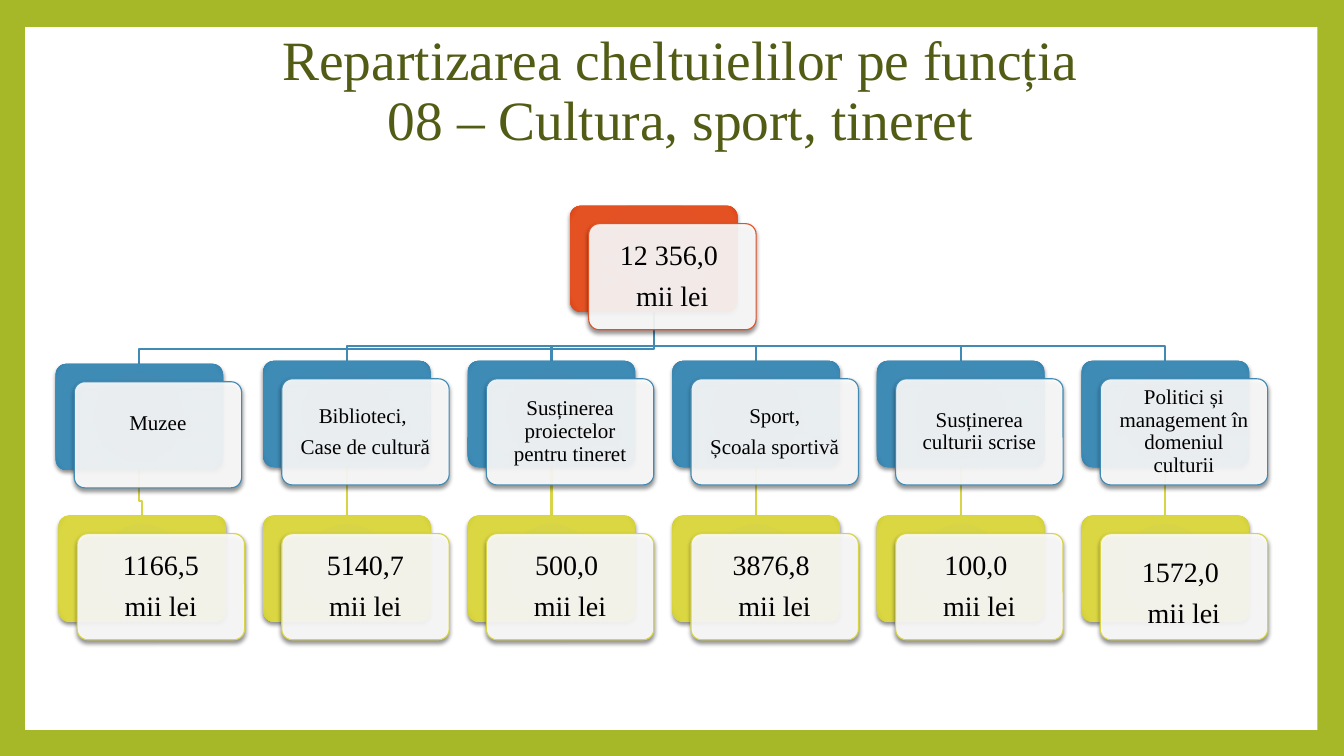
"""Builds a slide with the tree of culture, sport and youth spending."""
from lxml import etree
from pptx import Presentation
from pptx.dml.color import RGBColor
from pptx.enum.shapes import MSO_CONNECTOR, MSO_SHAPE
from pptx.enum.text import MSO_ANCHOR, PP_ALIGN
from pptx.oxml import parse_xml
from pptx.oxml.ns import nsdecls, qn
from pptx.util import Pt

RECT, ROUNDED = MSO_SHAPE.RECTANGLE, MSO_SHAPE.ROUNDED_RECTANGLE
STRAIGHT = MSO_CONNECTOR.STRAIGHT
CENTER, MIDDLE = PP_ALIGN.CENTER, MSO_ANCHOR.MIDDLE

GREEN = RGBColor(0xA6, 0xB7, 0x27)
OLIVE = RGBColor(0x53, 0x5C, 0x14)
WHITE = RGBColor(0xFF, 0xFF, 0xFF)
BLACK = RGBColor(0x00, 0x00, 0x00)
RED = RGBColor(0xDF, 0x53, 0x27)
RED_MID = RGBColor(0xE4, 0x51, 0x22)
RED_EDGE = RGBColor(0xDB, 0x43, 0x13)
BLUE = RGBColor(0x41, 0x8A, 0xB3)
BLUE_MID = RGBColor(0x3E, 0x8B, 0xB6)
BLUE_EDGE = RGBColor(0x31, 0x80, 0xAD)
YELLOW = RGBColor(0xD7, 0xD4, 0x47)
YELLOW_MID = RGBColor(0xDB, 0xD7, 0x43)
YELLOW_EDGE = RGBColor(0xD0, 0xCD, 0x33)
REDS = (RED, RED_MID, RED_EDGE)
BLUES = (BLUE, BLUE_MID, BLUE_EDGE)
YELLOWS = (YELLOW, YELLOW_MID, YELLOW_EDGE)

BOX_W, BOX_H = 119.6, 75.8
CARD_DX, CARD_DY = 13.3, 12.8
FIRST_X, PITCH = 41.8, 146.16
TOTAL_X, TOTAL_Y = 407.2, 147
CATEGORY_Y, VALUE_Y, BUS_Y = 257.8, 368.4, 247
MUSEUM_X, MUSEUM_Y, MUSEUM_BUS_Y = 39.7, 259.9, 249

BRANCHES = [
    ("Muzee", "1166,5\nmii lei"),
    ("Biblioteci, \nCase de cultură", "5140,7\nmii lei"),
    ("Susținerea proiectelor pentru tineret", "500,0 \nmii lei"),
    ("Sport,\nȘcoala sportivă", "3876,8 \nmii lei"),
    ("Susținerea culturii scrise", "100,0 \nmii lei"),
    ("Politici și management în domeniul culturii", "1572,0 \nmii lei"),
]


def write_text(shape, text, size, color=BLACK, gap=0, inset=0, shift=0):
    frame = shape.text_frame
    frame.word_wrap = True
    frame.vertical_anchor = MIDDLE
    frame.margin_left = frame.margin_right = Pt(inset)
    frame.margin_top = Pt(inset + max(0, 2 * shift))
    frame.margin_bottom = Pt(inset + max(0, -2 * shift))
    for index, line in enumerate(text.split("\n")):
        paragraph = frame.paragraphs[0] if index == 0 else frame.add_paragraph()
        paragraph.text = line
        paragraph.alignment = CENTER
        paragraph.line_spacing = 0.9
        paragraph.space_after = Pt(gap)
        for run in paragraph.runs:
            run.font.name = "Times New Roman"
            run.font.size = Pt(size)
            run.font.color.rgb = color


def add_box(x, y, colors, text, size, inset, shift=0):
    boxes = []
    for dx, dy in ((0, 0), (CARD_DX, CARD_DY)):
        box = slide.shapes.add_shape(ROUNDED, Pt(x + dx), Pt(y + dy), Pt(BOX_W), Pt(BOX_H))
        box.adjustments[0] = 0.1
        box.fill.solid()
        box.fill.fore_color.rgb = WHITE
        box.line.fill.background()
        box.shadow.inherit = False
        box.element.spPr.find(qn("a:effectLst")).append(parse_xml(
            f'<a:outerShdw {nsdecls("a")} blurRad="38100" dist="25400" dir="5400000" rotWithShape="0">'
            '<a:srgbClr val="000000"><a:alpha val="45000"/></a:srgbClr></a:outerShdw>'))
        boxes.append(box)
    back, card = boxes
    stops = "".join(f'<a:gs pos="{position}"><a:srgbClr val="{color}"/></a:gs>'
                    for position, color in zip((0, 90000, 100000), colors))
    solid = back.element.spPr.find(qn("a:solidFill"))
    back.element.spPr.replace(solid, parse_xml(
        f'<a:gradFill {nsdecls("a")} rotWithShape="1"><a:gsLst>{stops}</a:gsLst><a:path path="circle">'
        '<a:fillToRect l="100000" t="100000" r="100000" b="100000"/></a:path></a:gradFill>'))
    card_color = card.element.spPr.find(qn("a:solidFill"))[0]
    etree.SubElement(card_color, qn("a:alpha")).set("val", "90000")
    card.line.color.rgb = colors[0]
    card.line.width = Pt(0.79)
    write_text(card, text, size, gap=0.4 * size, inset=inset, shift=shift)
    return back


prs = Presentation()
prs.slide_width, prs.slide_height = Pt(960), Pt(540)
slide = prs.slides.add_slide(prs.slide_layouts[6])
slide.background.fill.solid()
slide.background.fill.fore_color.rgb = GREEN

panel = slide.shapes.add_shape(RECT, Pt(18), Pt(19.4), Pt(923), Pt(502))
panel.fill.solid()
panel.fill.fore_color.rgb = WHITE
panel.line.fill.background()
panel.shadow.inherit = False

title = slide.shapes.add_textbox(Pt(108), Pt(23), Pt(756), Pt(86))
write_text(title, "Repartizarea cheltuielilor pe funcția\v08 – Cultura, sport, tineret", 39.6, color=OLIVE)

columns = [FIRST_X + PITCH * index for index in range(len(BRANCHES))]
categories = [(MUSEUM_X, MUSEUM_Y, MUSEUM_BUS_Y)] + [(x, CATEGORY_Y, BUS_Y) for x in columns[1:]]
elbows = [(TOTAL_X, TOTAL_Y + BOX_H, bus_y, x, y, BLUE) for x, y, bus_y in categories]
elbows.append((MUSEUM_X, MUSEUM_Y + BOX_H, 357.8, FIRST_X, VALUE_Y, YELLOW))
for start_x, start_y, bend_y, end_x, end_y, color in elbows:
    start, end = Pt(start_x + BOX_W / 2), Pt(end_x + BOX_W / 2)
    builder = slide.shapes.build_freeform(start, Pt(start_y))
    builder.add_line_segments([(start, Pt(bend_y)), (end, Pt(bend_y)), (end, Pt(end_y))], close=False)
    elbow = builder.convert_to_shape()
    elbow.fill.background()
    elbow.line.color.rgb = color
    elbow.line.width = Pt(1.5)
    elbow.shadow.inherit = False

total_back = add_box(TOTAL_X, TOTAL_Y, REDS, "12 356,0 \nmii lei", 20, 8)
for index, (category, value) in enumerate(BRANCHES):
    x, y, bus_y = categories[index]
    category_back = add_box(x, y, BLUES, category, 15, 6.5, shift=-8 if index == 0 else 0)
    value_back = add_box(columns[index], VALUE_Y, YELLOWS, value, 20, 8,
                         shift=5 if index == len(BRANCHES) - 1 else 0)
    if index > 0:
        link = slide.shapes.add_connector(STRAIGHT, 0, 0, 0, 0)
        link.begin_connect(category_back, 2)
        link.end_connect(value_back, 0)
        link.line.color.rgb = YELLOW
        link.line.width = Pt(1.5)
        etree.SubElement(link.element.spPr, qn("a:effectLst"))
        total_back.element.addprevious(link.element)

prs.save("out.pptx")
